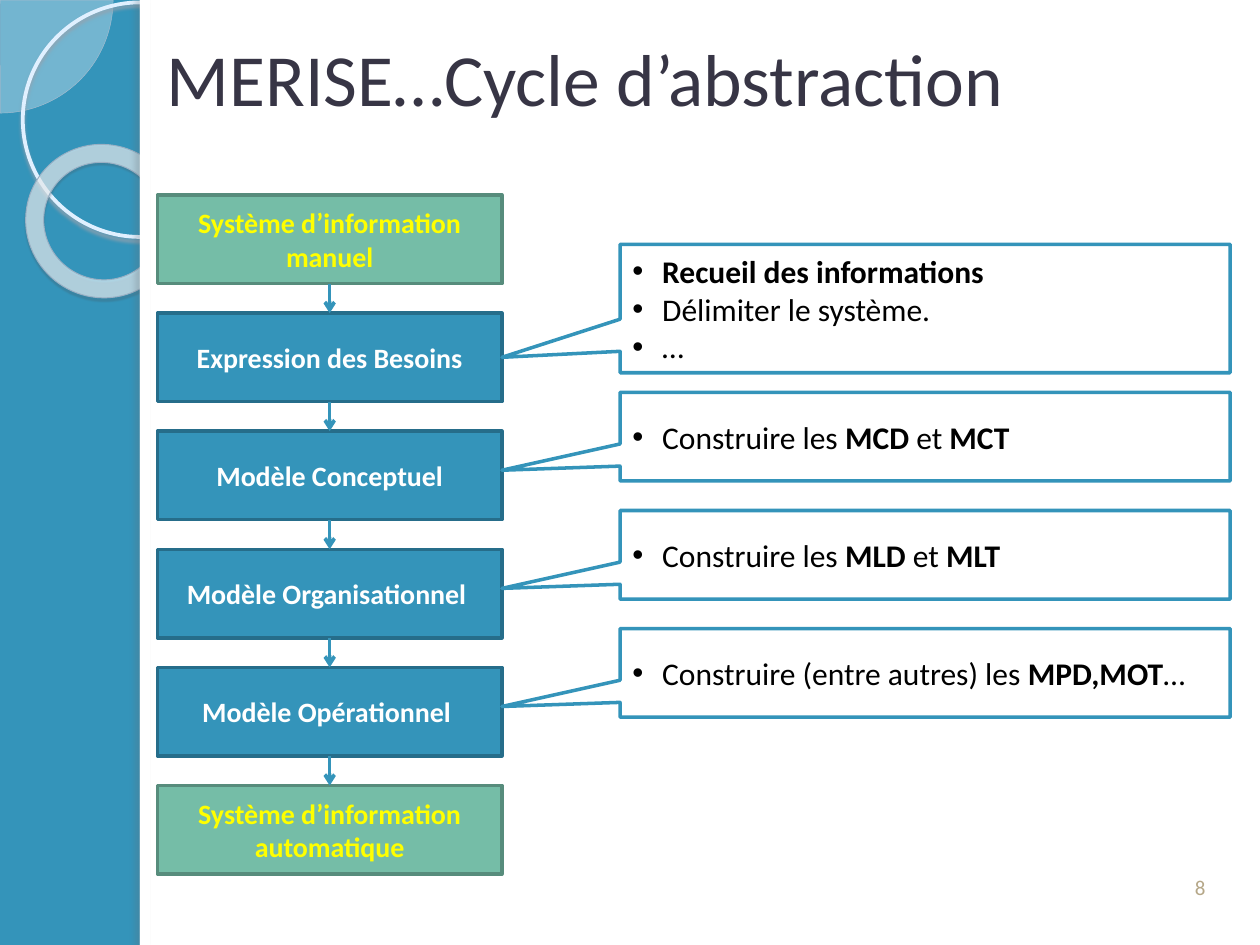
from dataclasses import dataclass

from pptx import Presentation
from pptx.dml.color import RGBColor
from pptx.enum.shapes import MSO_CONNECTOR, MSO_SHAPE
from pptx.enum.text import MSO_ANCHOR, PP_ALIGN
from pptx.oxml.ns import qn
from pptx.util import Pt
from lxml import etree

RECT, ROUNDED = MSO_SHAPE.RECTANGLE, MSO_SHAPE.ROUNDED_RECTANGLE
PIE, ELLIPSE, DONUT = MSO_SHAPE.PIE, MSO_SHAPE.OVAL, MSO_SHAPE.DONUT
CALLOUT = MSO_SHAPE.RECTANGULAR_CALLOUT
STRAIGHT = MSO_CONNECTOR.STRAIGHT
LEFT, CENTER = PP_ALIGN.LEFT, PP_ALIGN.CENTER
TOP, MIDDLE, BOTTOM = MSO_ANCHOR.TOP, MSO_ANCHOR.MIDDLE, MSO_ANCHOR.BOTTOM
SIDE_TOP, SIDE_BOTTOM = 0, 2


@dataclass(frozen=True)
class Theme:
    font: str = "Calibri"
    blue: str = "3494BA"
    blue_edge: str = "266D8A"
    green: str = "75BDA7"
    green_edge: str = "578C7C"
    white: str = "FFFFFF"
    yellow: str = "FFFF00"
    black: str = "000000"
    title: str = "373545"
    number: str = "B5A788"
    title_size: float = 42
    step_size: float = 16
    note_size: float = 18
    number_size: float = 12
    line: float = 2


THEME = Theme()

# Step label lines, and whether the step is an end of the cycle
STEPS = [
    (["Système d’information", "manuel"], True),
    (["Expression des Besoins"], False),
    (["Modèle Conceptuel"], False),
    (["Modèle Organisationnel "], False),
    (["Modèle Opérationnel "], False),
    (["Système d’information", "automatique"], True),
]
# Each note is a list of bullets, each bullet a list of (text, bold)
NOTES = [
    [[("Recueil des informations", True)], [("Délimiter le système.", False)], [("…", False)]],
    [[("Construire les ", False), ("MCD", True), (" et ", False), ("MCT", True)]],
    [[("Construire les ", False), ("MLD", True), (" et ", False), ("MLT", True)]],
    [[("Construire (entre autres) les ", False), ("MPD,MOT", True), ("…", False)]],
]


def set_alpha(color, percent):
    etree.SubElement(color, qn("a:alpha"), val=str(percent * 1000))


def add_box(page, kind, box, fill=None, line=None, width=THEME.line, alpha=None):
    shape = page.shapes.add_shape(kind, *(Pt(value) for value in box))
    shape.shadow.inherit = False
    if fill:
        shape.fill.solid()
        shape.fill.fore_color.rgb = RGBColor.from_string(fill)
        if alpha:
            set_alpha(shape.element.spPr.find(qn("a:solidFill"))[0], alpha)
    else:
        shape.fill.background()
    if line:
        shape.line.color.rgb = RGBColor.from_string(line)
        shape.line.width = Pt(width)
    else:
        shape.line.fill.background()
    return shape


def add_shadow(shape, color, alpha, blur, distance, angle):
    effects = shape.element.spPr.find(qn("a:effectLst"))
    shadow = etree.SubElement(
        effects, qn("a:outerShdw"), blurRad=str(Pt(blur)), dist=str(Pt(distance)),
        dir=str(angle * 60000), algn="tl", rotWithShape="0")
    set_alpha(etree.SubElement(shadow, qn("a:srgbClr"), val=color), alpha)


def write(shape, paragraphs, size, color, align=CENTER, anchor=MIDDLE, bullet=False):
    frame = shape.text_frame
    frame.word_wrap = True
    frame.vertical_anchor = anchor
    for index, parts in enumerate(paragraphs):
        para = frame.add_paragraph() if index else frame.paragraphs[0]
        para.alignment = align
        if bullet:
            properties = para._p.get_or_add_pPr()
            properties.set("marL", str(Pt(17)))
            properties.set("indent", str(Pt(-17)))
            etree.SubElement(properties, qn("a:buFont"), typeface="Arial")
            etree.SubElement(properties, qn("a:buChar"), char="•")
        for text, bold in parts:
            span = para.add_run()
            span.text = text
            span.font.name = THEME.font
            span.font.size = Pt(size)
            span.font.bold = bold
            span.font.color.rgb = RGBColor.from_string(color)


def add_side_band(page, box):
    """Circles on the blue background, cut off by the white page area."""
    left, top, width, height = box
    quarter = add_box(page, PIE, (left - 64.3, top - 64.3, 128.9, 128.9),
                      "F5F9FD", "A6BCCF", 0.25, alpha=33)
    quarter.adjustments[0], quarter.adjustments[1] = 0, 54
    circle = add_box(page, ELLIPSE, (left + 13, top + 1.4, 134, 134), None, "E0F0FF", 2.15)
    add_shadow(circle, "94A2AF", 85, 2, 2, 90)
    ring = add_box(page, DONUT, (left + 14.4, top + 82.8, 88.6, 87.1),
                   "F9FCFE", "99B0C4", 0.58, alpha=62)
    ring.adjustments[0] = 0.118
    ring.rotation = 38.6
    add_shadow(ring, "475159", 35, 1, 1.2, 75)
    edge = left + width
    add_box(page, RECT, (edge, top, 720 - edge, height), THEME.white)
    strip = add_box(page, RECT, (edge, top, 5.8, height), THEME.white)
    add_shadow(strip, "666D73", 25, 3, 3, 180)


def add_arrow(page, upper, lower):
    arrow = page.shapes.add_connector(STRAIGHT, 0, 0, 0, 0)
    arrow.begin_connect(upper, SIDE_BOTTOM)
    arrow.end_connect(lower, SIDE_TOP)
    arrow.line.color.rgb = RGBColor.from_string(THEME.blue)
    arrow.line.width = Pt(THEME.line)
    properties = arrow.element.spPr
    etree.SubElement(properties.find(qn("a:ln")), qn("a:tailEnd"), type="arrow")
    etree.SubElement(properties, qn("a:effectLst"))


def add_steps(page, box, pitch, step_height):
    left, top, width, _ = box
    shapes = []
    for index, (lines, is_end) in enumerate(STEPS):
        fill, edge, color = ((THEME.green, THEME.green_edge, THEME.yellow) if is_end
                             else (THEME.blue, THEME.blue_edge, THEME.white))
        step = add_box(page, RECT, (left, top + index * pitch, width, step_height), fill, edge)
        write(step, [[(line, True)] for line in lines], THEME.step_size, color)
        shapes.append(step)
    for upper, lower in zip(shapes, shapes[1:]):
        add_arrow(page, upper, lower)


def add_notes(page, box, pitch, note_height, first_height, tip_x):
    """Callouts in rows; the taller first one starts at the top of the box."""
    left, top, width, height = box
    last_top = top + height - note_height
    for index, bullets in enumerate(NOTES):
        first = index == 0
        note_top = top if first else last_top - (len(NOTES) - 1 - index) * pitch
        note = add_box(page, CALLOUT,
                       (left, note_top, width, first_height if first else note_height),
                       THEME.white, THEME.blue)
        note.adjustments[0] = (tip_x - left) / width - 0.5
        note.adjustments[1] = 0.38
        write(note, bullets, THEME.note_size, THEME.black, LEFT, bullet=True)


def add_title(page, box):
    title = add_box(page, ROUNDED, box)
    write(title, [[("MERISE…Cycle d’abstraction", False)]],
          THEME.title_size, THEME.title, LEFT, TOP)


def add_page_number(page, box):
    number = page.shapes.add_textbox(*(Pt(value) for value in box))
    write(number, [[("8", False)]], THEME.number_size, THEME.number, anchor=BOTTOM)


def main():
    deck = Presentation()
    deck.slide_width, deck.slide_height = Pt(720), Pt(540)
    page = deck.slides.add_slide(deck.slide_layouts[6])
    page.background.fill.solid()
    page.background.fill.fore_color.rgb = RGBColor.from_string(THEME.blue)

    pitch, row_height = 67.5, 50.6
    add_side_band(page, (0, 0, 80, 540))
    add_steps(page, (90, 111.4, 196.8, 388.1), pitch, row_height)
    add_notes(page, (354.3, 139.6, 348.7, 270.2), pitch, row_height, 73.4, tip_x=286.8)
    add_page_number(page, (661.7, 481.7, 48.2, 36))
    add_title(page, (84.2, 11.5, 618.5, 84.2))
    deck.save("out.pptx")


if __name__ == "__main__":
    main()
